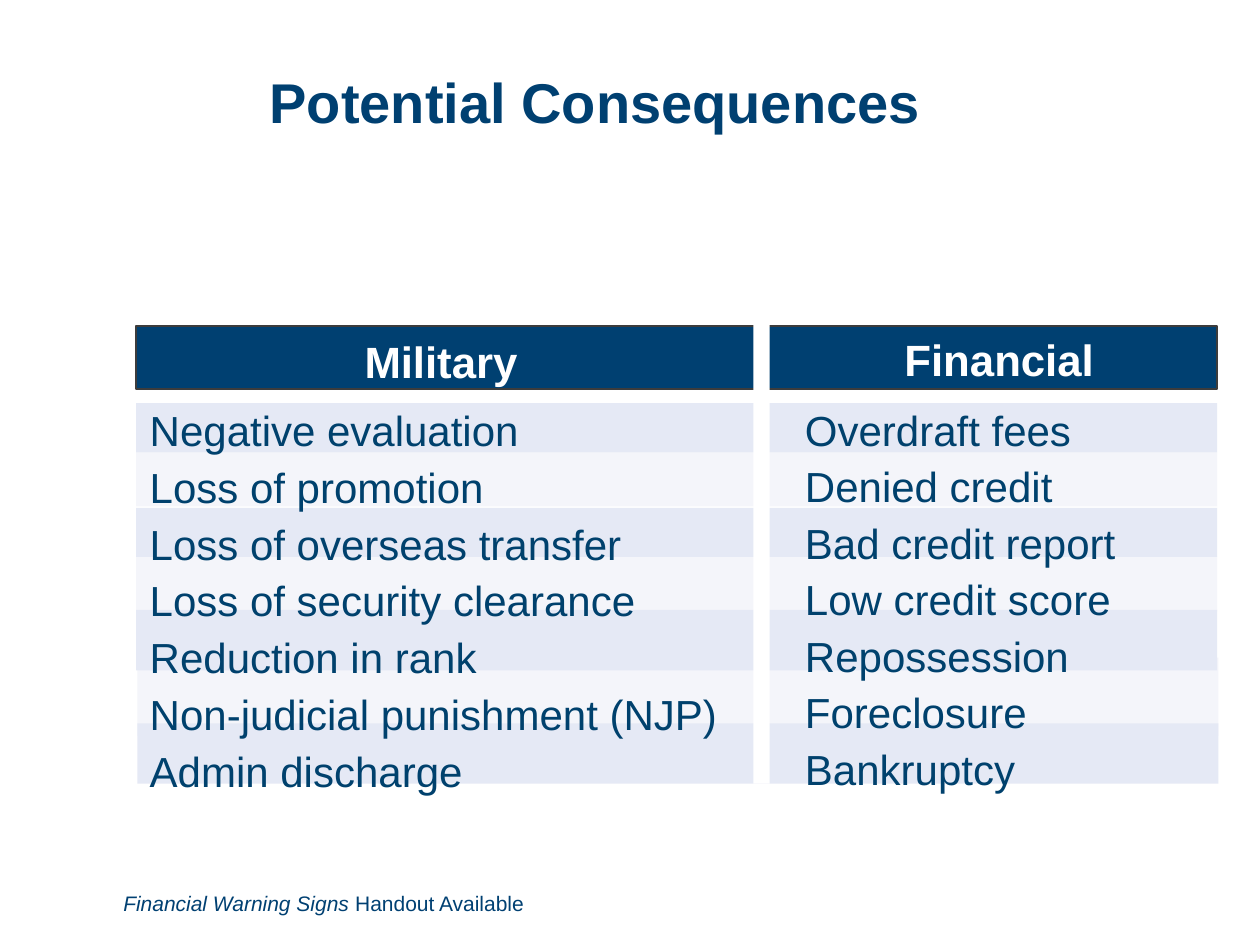
from dataclasses import dataclass
from typing import NamedTuple

from pptx import Presentation
from pptx.dml.color import RGBColor as Rgb
from pptx.enum.shapes import MSO_SHAPE as Kind
from pptx.enum.text import MSO_ANCHOR as Anchor
from pptx.enum.text import MSO_AUTO_SIZE as Fit
from pptx.enum.text import PP_ALIGN as Align
from pptx.util import Pt

PX = 9144  # 100 px to the inch


@dataclass(frozen=True)
class Theme:
    font: str = "Arial"
    navy: str = "004071"
    ink: str = "00416D"
    note: str = "004072"
    edge: str = "3C3C3C"
    dark: str = "E5E9F5"
    light: str = "F4F5FA"
    white: str = "FFFFFF"
    title: int = 32
    head: int = 25
    body: int = 24
    foot: int = 12


class Box(NamedTuple):
    x: int
    y: int
    w: int
    h: int

    def emu(self) -> list[int]:
        return [side * PX for side in self]


class Run(NamedTuple):
    text: str
    italic: bool = False


class Column(NamedTuple):
    head: str
    top: Box
    area: Box
    before: float
    items: list[str]


class Band(NamedTuple):
    box: Box
    fill: str


T = Theme()

# Back to front: each dark band covers the edge of the light one below it
BANDS = [
    Band(Box(108, 359, 858, 43), T.light),
    Band(Box(108, 320, 858, 39), T.dark),
    Band(Box(108, 442, 858, 43), T.light),
    Band(Box(108, 403, 858, 39), T.dark),
    Band(Box(109, 522, 858, 62), T.light),
    Band(Box(108, 484, 858, 48), T.dark),
    Band(Box(109, 574, 858, 48), T.dark),
]

COLUMNS = [
    Column("Military", Box(108, 261, 484, 52), Box(109, 316, 483, 307), 2.5, [
        "Negative evaluation",
        "Loss of promotion",
        "Loss of overseas transfer",
        "Loss of security clearance",
        "Reduction in rank",
        "Non-judicial punishment (NJP)",
        "Admin discharge",
    ]),
    Column("Financial", Box(620, 259, 346, 52), Box(629, 316, 292, 307), 2.3, [
        "Overdraft fees",
        "Denied credit",
        "Bad credit report",
        "Low credit score",
        "Repossession",
        "Foreclosure",
        "Bankruptcy",
    ]),
]


def write(frame, lines: list[list[Run]], *, size: int, color: str,
          bold: bool = False, align=None, before: float = 0,
          after: float = 0, pitch: float | None = None) -> None:
    """Fill a text frame, one list of runs to a paragraph."""
    frame.word_wrap = True
    for i, line in enumerate(lines):
        para = frame.add_paragraph() if i else frame.paragraphs[0]
        para.alignment = align
        para.line_spacing = pitch
        if i and before:
            para.space_before = Pt(before)
        if after:
            para.space_after = Pt(after)
        for part in line:
            run = para.add_run()
            run.text = part.text
            font = run.font
            font.name, font.size = T.font, Pt(size)
            font.bold, font.italic = bold, part.italic
            font.color.rgb = Rgb.from_string(color)


def label(parent, box: Box, lines: list[list[Run]], **style) -> None:
    frame = parent.add_textbox(*box.emu()).text_frame
    frame.auto_size = Fit.SHAPE_TO_FIT_TEXT
    write(frame, lines, **style)


def block(parent, box: Box, fill: str, line: str | None = None) -> None:
    shape = parent.add_shape(Kind.RECTANGLE, *box.emu())
    shape.shadow.inherit = False
    shape.fill.solid()
    shape.fill.fore_color.rgb = Rgb.from_string(fill)
    if line:
        shape.line.color.rgb = Rgb.from_string(line)
        shape.line.width = Pt(1)
    else:
        shape.line.fill.background()


def main() -> None:
    deck = Presentation()
    deck.slide_width, deck.slide_height = 1000 * PX, 750 * PX
    slide = deck.slides.add_slide(deck.slide_layouts[5])

    # Title
    title = slide.shapes.title
    title.left, title.top, title.width, title.height = Box(204, 11, 761, 145).emu()
    title.text_frame.vertical_anchor = Anchor.MIDDLE
    write(title.text_frame, [[Run("Potential Consequences")]], size=T.title,
          color=T.navy, bold=True, align=Align.LEFT, pitch=0.9)

    # Header bar and striped bands, split by a white gap
    panel = slide.shapes.add_group_shape().shapes
    block(panel, Box(108, 259, 858, 50), T.navy, T.edge)
    for band in BANDS:
        block(panel, band.box, band.fill)
    block(panel, Box(598, 244, 13, 378), T.white)

    # Column heads and lists
    for col in COLUMNS:
        label(panel, col.top, [[Run(col.head)]], size=T.head, color=T.white,
              bold=True, align=Align.CENTER)
        label(panel, col.area, [[Run(item)] for item in col.items],
              size=T.body, color=T.ink, before=col.before, after=1.2)

    # Handout note
    label(slide.shapes, Box(88, 702, 509, 30),
          [[Run("Financial Warning Signs ", True), Run("Handout Available")]],
          size=T.foot, color=T.note)

    deck.save("out.pptx")


if __name__ == "__main__":
    main()
